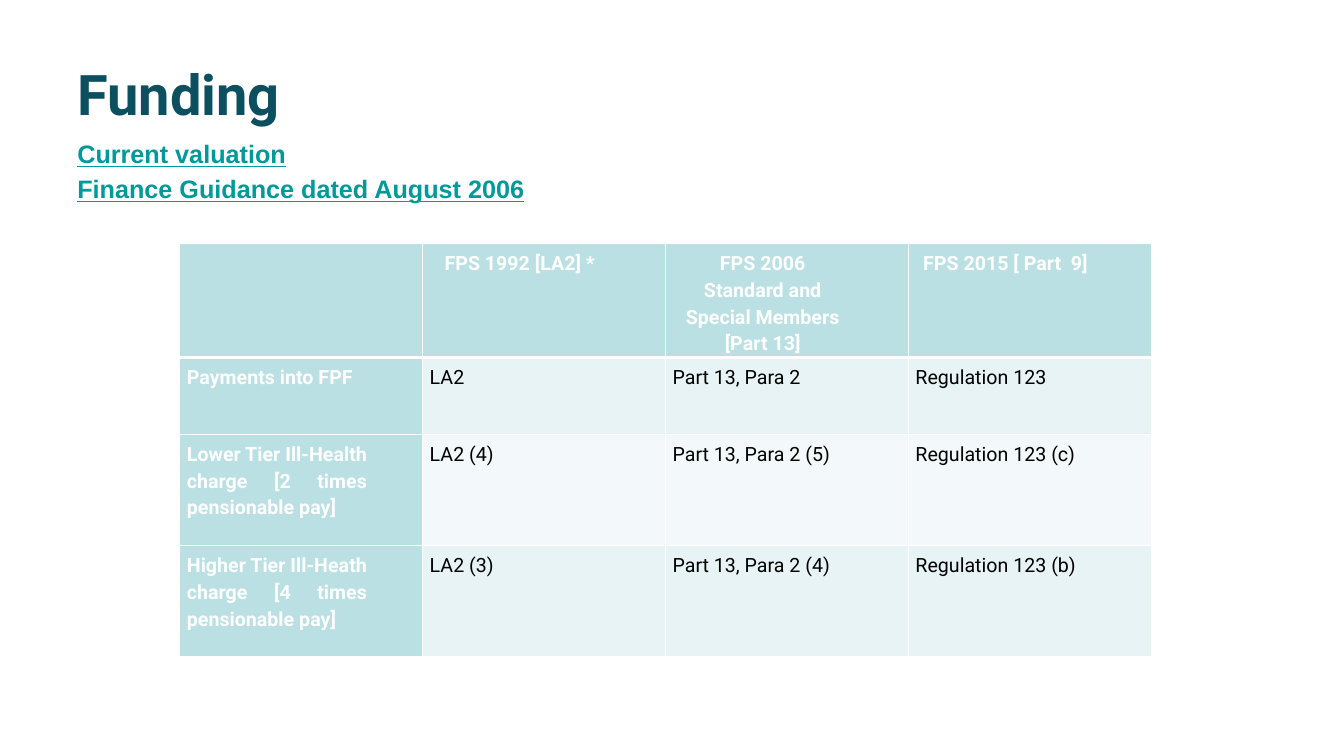
from lxml import etree
from pptx import Presentation
from pptx.dml.color import RGBColor
from pptx.enum.text import MSO_ANCHOR, PP_ALIGN
from pptx.oxml.ns import qn
from pptx.util import Cm, Pt

LEFT, CENTER, JUSTIFY = PP_ALIGN.LEFT, PP_ALIGN.CENTER, PP_ALIGN.JUSTIFY
MIDDLE = MSO_ANCHOR.MIDDLE
COLORS = {
    "title": "0C5060",
    "link": "009999",
    "heading": "BBE0E3",
    "odd": "E7F3F4",
    "even": "F3F9FA",
    "white": "FFFFFF",
    "black": "000000",
}


def set_font(paragraph, name, size, color, bold):
    font = paragraph.font
    font.name, font.size, font.bold = name, Pt(size), bold
    font.color.rgb = RGBColor.from_string(COLORS[color])


def add_border(cell, side, width):
    line = etree.SubElement(cell._tc.get_or_add_tcPr(), qn(f"a:{side}"), w=str(Pt(width)))
    fill = etree.SubElement(line, qn("a:solidFill"))
    etree.SubElement(fill, qn("a:srgbClr"), val=COLORS["white"])


prs = Presentation()
prs.slide_width, prs.slide_height = Cm(33.87), Cm(19.05)
slide = prs.slides.add_slide(prs.slide_layouts[5])

# Title
title = slide.shapes.title
title.left, title.top, title.width, title.height = Cm(1.7), Cm(0.76), Cm(30.48), Cm(3.18)
title.text_frame.text = "Funding"
title.text_frame.vertical_anchor = MIDDLE
title.text_frame.paragraphs[0].alignment = LEFT
set_font(title.text_frame.paragraphs[0], "Roboto", 40, "title", True)

# Guidance references
guidance = slide.shapes.add_textbox(Cm(1.7), Cm(3.25), Cm(29.64), Cm(2.03)).text_frame
guidance.word_wrap = True
guidance.text = "Current valuation\nFinance Guidance dated August 2006"
for reference in guidance.paragraphs:
    reference.line_spacing = 1.15
    set_font(reference, "Arial", 18, "link", True)
    reference.font.underline = True

# Funding rules by scheme
rules = [
    ["", "FPS 1992 [LA2] *", "FPS 2006\nStandard and Special Members [Part 13]", "FPS 2015 [ Part  9]"],
    ["Payments into FPF", "LA2", "Part 13, Para 2", "Regulation 123"],
    ["Lower Tier Ill-Health charge [2 times pensionable pay]",
     "LA2 (4)", "Part 13, Para 2 (5)", "Regulation 123 (c)"],
    ["Higher Tier Ill-Heath charge [4 times pensionable pay]",
     "LA2 (3)", "Part 13, Para 2 (4)", "Regulation 123 (b)"],
]
row_heights = [2.8, 1.95, 2.8, 2.8]
schemes = slide.shapes.add_table(4, 4, Cm(4.53), Cm(6.13), Cm(24.48), Cm(sum(row_heights))).table

for r, rule in enumerate(rules):
    schemes.rows[r].height = Cm(row_heights[r])
    for c, text in enumerate(rule):
        cell = schemes.cell(r, c)
        heading = r == 0 or c == 0

        # Borders, with a thicker rule under the header
        for side in ("lnL", "lnR", "lnT", "lnB"):
            under_header = (r, side) in ((0, "lnB"), (1, "lnT"))
            add_border(cell, side, 3 if under_header else 1)
        cell.fill.solid()
        band = "heading" if heading else "odd" if r % 2 else "even"
        cell.fill.fore_color.rgb = RGBColor.from_string(COLORS[band])

        # Text
        cell.margin_left, cell.margin_top = Cm(0.18), Cm(0.13)
        cell.margin_right, cell.margin_bottom = Cm(1.4), Cm(0)
        cell.text = text
        for paragraph in cell.text_frame.paragraphs:
            paragraph.line_spacing = 1.15
            if r == 0:
                paragraph.alignment = CENTER
            elif c == 0 and r > 1:
                paragraph.alignment = JUSTIFY
            else:
                paragraph.alignment = LEFT
            set_font(paragraph, "Roboto", 14, "white" if heading else "black", heading)

schemes.cell(0, 2).text_frame.paragraphs[0].space_after = Pt(0.6)

prs.save("out.pptx")
